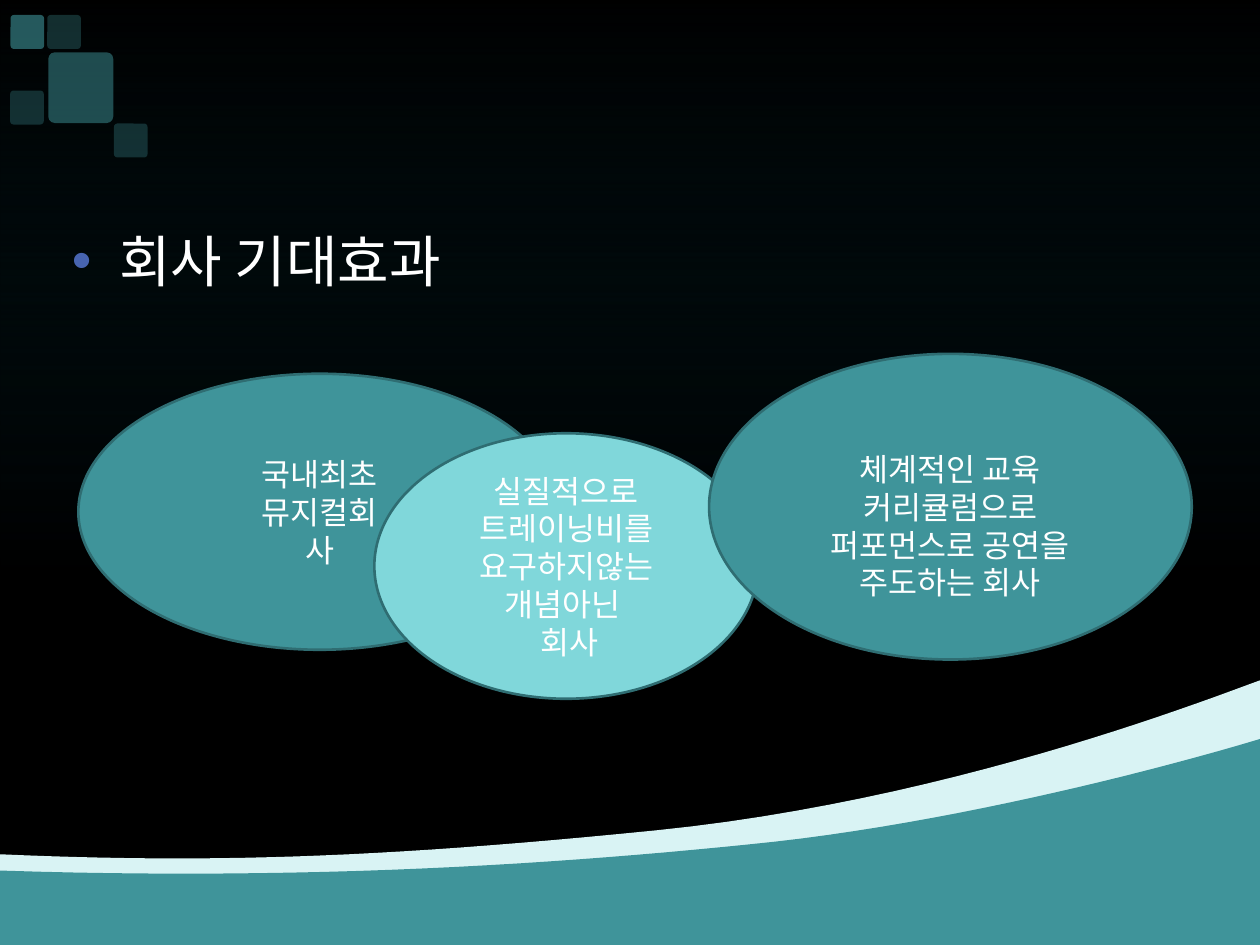
from lxml.etree import SubElement
from pptx import Presentation
from pptx.dml.color import RGBColor
from pptx.enum.shapes import MSO_SHAPE as Shape
from pptx.enum.text import MSO_ANCHOR as Anchor, PP_ALIGN as Align
from pptx.oxml.ns import qn
from pptx.util import Pt

WIDE, HIGH = 720, 540
FONT = "DejaVu Sans"
BLACK = RGBColor(0, 0, 0)
WHITE = RGBColor(255, 255, 255)
DEEP = RGBColor(0x00, 0x54, 0x66)
TEAL = RGBColor(0x3F, 0x94, 0x9A)
AQUA = RGBColor(0x80, 0xD7, 0xDA)
PALE = RGBColor(0xD9, 0xF3, 0xF4)
EDGE = RGBColor(0x2F, 0x6D, 0x72)
DOT = "4764B0"

TITLE = "회사 기대효과"
BODY = (33.84, 126, 650.16, 356.4)
OVALS = [
    ((44.8, 213.6, 275.8, 157.7), TEAL, 3.6,
     ["국내최초", "뮤지컬회", "사"]),
    ((213.9, 247.6, 219.2, 151.7), AQUA, 3.6,
     ["실질적으로 트레이닝비를 요구하지않는 개념아닌 ", " 회사"]),
    ((405.2, 202.2, 275.8, 174.7), TEAL, 25.2,
     ["체계적인 교육 커리큘럼으로 퍼포먼스로 공연을 주도하는 회사"]),
]
WAVES = [
    (PALE, (0, 488.2), [
        ((115.9, 493.2), (211, 491), (375.1, 474.5)),
        ((539.3, 457.9), (682.6, 402.5), (720, 388.8))]),
    (TEAL, (0, 497.5), [
        ((177.1, 503.3), (320.4, 494), (442.8, 481)),
        ((564.5, 467.3), (690.5, 431.3), (720, 422.3))]),
]
TILES = [
    ((27, 8.6, 19.2, 19.4), 30),
    ((5.8, 51.8, 19.2, 19.4), 30),
    ((6, 8.6, 19.2, 19.4), 60),
    ((65.1, 70.6, 19.2, 19.4), 30),
    ((27.6, 29.9, 37.1, 40.4), 50),
]
STOPS = [(0, DEEP, 0), (0.61, BLACK, 40)]


def add(slide, kind, box, color=None):
    shape = slide.shapes.add_shape(kind, *map(Pt, box))
    shape.shadow.inherit = False
    shape.line.fill.background()
    if color is not None:
        shape.fill.solid()
        shape.fill.fore_color.rgb = color
    return shape


def fade(shape, *rates):
    for node, rate in zip(shape.element.iter(qn("a:srgbClr")), rates):
        SubElement(node, qn("a:alpha"), val=str(rate * 1000))


def style(font, size):
    for key, value in {"name": FONT, "size": Pt(size)}.items():
        setattr(font, key, value)
    font.color.rgb = WHITE


def trace(start, curves, steps=24):
    dots = [start]
    for a, b, end in curves:
        first = dots[-1]
        for i in range(1, steps + 1):
            t = i / steps
            u = 1 - t
            mix = (u**3, 3 * u * u * t, 3 * u * t * t, t**3)
            dots.append(tuple(
                sum(m * p[k] for m, p in zip(mix, (first, a, b, end)))
                for k in (0, 1)))
    return dots + [(WIDE, HIGH), (0, HIGH)]


def add_wave(slide, color, start, curves):
    dots = [(Pt(x), Pt(y)) for x, y in trace(start, curves)]
    pen = slide.shapes.build_freeform(*dots[0])
    pen.add_line_segments(dots[1:], close=True)
    wave = pen.convert_to_shape()
    wave.shadow.inherit = False
    wave.fill.solid()
    wave.fill.fore_color.rgb = color
    wave.line.fill.background()


def add_back(slide):
    sky = add(slide, Shape.RECTANGLE, (0, 0, WIDE, HIGH))
    sky.fill.gradient()
    sky.fill.gradient_angle = 270
    for stop, (place, color, _) in zip(sky.fill.gradient_stops, STOPS):
        stop.position = place
        stop.color.rgb = color
    fade(sky, *(rate for _, _, rate in STOPS))
    for wave in WAVES:
        add_wave(slide, *wave)
    for box, rate in TILES:
        tile = add(slide, Shape.ROUNDED_RECTANGLE, box, TEAL)
        tile.adjustments[0] = 0.1
        fade(tile, rate)


def fill_body(slide, body):
    slide.shapes.element.append(body.element)
    for key, value in zip(("left", "top", "width", "height"), BODY):
        setattr(body, key, Pt(value))
    para = body.text_frame.paragraphs[0]
    run = para.add_run()
    run.text = TITLE
    style(run.font, 32)
    tint = SubElement(para._p.get_or_add_pPr(), qn("a:buClr"))
    SubElement(tint, qn("a:srgbClr"), val=DOT)


def add_oval(slide, box, color, top, lines):
    oval = add(slide, Shape.OVAL, box, color)
    oval.line.color.rgb = EDGE
    oval.line.width = Pt(1.5)
    frame = oval.text_frame
    looks = {"word_wrap": True, "margin_top": Pt(top),
             "vertical_anchor": Anchor.MIDDLE}
    for key, value in looks.items():
        setattr(frame, key, value)
    frame.text = "\n".join(lines)
    for para in frame.paragraphs:
        para.alignment = Align.CENTER
        style(para.runs[0].font, 18)


def main():
    deck = Presentation()
    deck.slide_width, deck.slide_height = Pt(WIDE), Pt(HIGH)
    slide = deck.slides.add_slide(deck.slide_layouts[1])
    slide.background.fill.solid()
    slide.background.fill.fore_color.rgb = BLACK
    title, body = slide.placeholders
    title.element.getparent().remove(title.element)
    add_back(slide)
    fill_body(slide, body)
    for oval in OVALS:
        add_oval(slide, *oval)
    deck.save("out.pptx")


if __name__ == "__main__":
    main()
